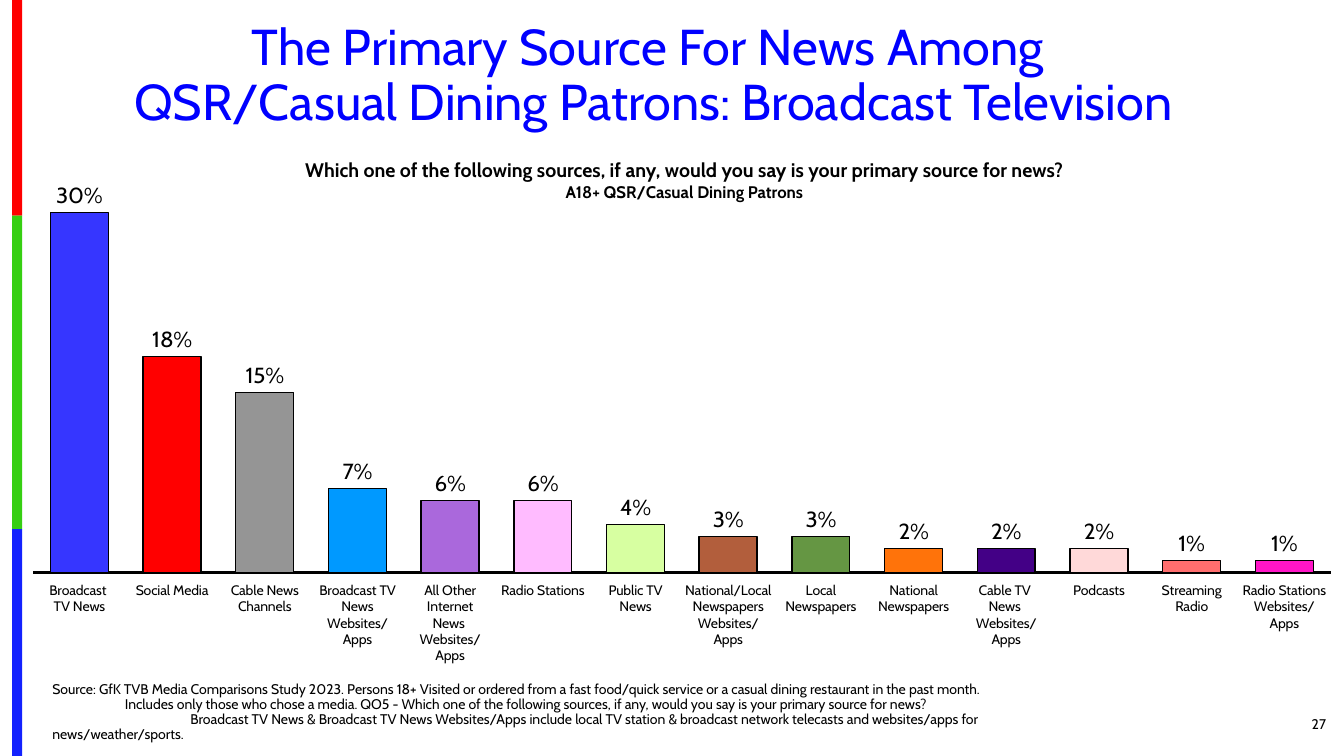
from pptx import Presentation
from pptx.chart.data import CategoryChartData
from pptx.dml.color import RGBColor
from pptx.enum.chart import XL_CHART_TYPE, XL_LABEL_POSITION, XL_TICK_LABEL_POSITION, XL_TICK_MARK
from pptx.enum.shapes import MSO_SHAPE
from pptx.enum.text import MSO_ANCHOR, PP_ALIGN
from pptx.oxml import parse_xml
from pptx.oxml.ns import nsdecls
from pptx.util import Inches, Pt

COLUMN = XL_CHART_TYPE.COLUMN_CLUSTERED
OUTSIDE = XL_LABEL_POSITION.OUTSIDE_END
LOW = XL_TICK_LABEL_POSITION.LOW
NO_TICK = XL_TICK_MARK.NONE
RECT = MSO_SHAPE.RECTANGLE
TOP, MIDDLE, BOTTOM = MSO_ANCHOR.TOP, MSO_ANCHOR.MIDDLE, MSO_ANCHOR.BOTTOM
LEFT, CENTER, RIGHT = PP_ALIGN.LEFT, PP_ALIGN.CENTER, PP_ALIGN.RIGHT

FONT = "Cabin"
COLORS = {"title": "0000FF", "text": "000000", "bar": "CCCCCC"}

# Colour and height of each stripe, from the top down
STRIPES = [("FE0000", 2.14), ("36CF12", 3.11), ("1322FE", 2.25)]

TITLE = "The Primary Source For News Among \vQSR/Casual Dining Patrons: Broadcast Television"
ASK = "Which one of the following sources, if any, would you say is your primary source for news?"
BASE = "A18+ QSR/Casual Dining Patrons"
# Each source line with its first-line indent
SOURCE = [
    ("Source: GfK TVB Media Comparisons Study 2023. Persons 18+ Visited or ordered from a fast "
     "food/quick service or a casual dining restaurant in the past month.", 0),
    ("Includes only those who chose a media. QO5 - Which one of the following sources, if any, "
     "would you say is your primary source for news?", 0.72),
    ("Broadcast TV News & Broadcast TV News Websites/Apps include local TV station & broadcast "
     "network telecasts and websites/apps for news/weather/sports.", 1.37),
]
PAGE = "27"

# Name, share and colour of each bar
BARS = [
    ("Broadcast \nTV News", 0.30, "3636FF"),
    ("Social Media", 0.18, "FF0000"),
    ("Cable News Channels", 0.15, "959595"),
    ("Broadcast TV News Websites/Apps", 0.07, "0099FF"),
    ("All Other Internet\nNews \nWebsites/Apps", 0.06, "AA68DC"),
    ("Radio Stations", 0.06, "FFBBFF"),
    ("Public TV News", 0.04, "D7FFA1"),
    ("National/Local Newspapers Websites/Apps", 0.03, "B25E3C"),
    ("Local Newspapers", 0.03, "659643"),
    ("National Newspapers", 0.02, "FF730A"),
    ("Cable TV \nNews \nWebsites/Apps", 0.02, "430086"),
    ("Podcasts", 0.02, "FFD9D9"),
    ("Streaming Radio", 0.01, "FF6E6E"),
    ("Radio Stations Websites/Apps", 0.01, "FF15C7"),
]
PLOT = {"x": 0.006, "y": 0.146, "w": 0.99, "h": 0.722}


def rgb(code):
    return RGBColor.from_string(code)


def style(font, size, color="text", bold=False):
    font.name, font.size, font.bold = FONT, Pt(size), bold
    font.color.rgb = rgb(COLORS[color])


def add_text(slide, box, lines, align=LEFT, anchor=TOP, space=1.0, color="text", bold=False):
    """Add a text box; each line is (text, size, first-line indent)."""
    frame = slide.shapes.add_textbox(*map(Inches, box)).text_frame
    frame.word_wrap = True
    frame.vertical_anchor = anchor
    for i, (text, size, indent) in enumerate(lines):
        para = frame.add_paragraph() if i else frame.paragraphs[0]
        para.text = text
        para.alignment, para.line_spacing = align, space
        if indent:
            para._p.get_or_add_pPr().set("indent", str(Inches(indent)))
        for run in para.runs:
            style(run.font, size, color, bold)


def add_stripes(slide):
    top = 0
    for color, height in STRIPES:
        bar = slide.shapes.add_shape(RECT, *map(Inches, (0.12, top, 0.1, height)))
        bar.shadow.inherit = False
        bar.fill.solid()
        bar.fill.fore_color.rgb = rgb(color)
        bar.line.fill.background()
        top += height


def place_plot(chart):
    """Fix the inner plot area as fractions of the chart."""
    modes = "".join(f'<c:{k}Mode val="edge"/>' for k in "xy")
    sizes = "".join(f'<c:{k} val="{v}"/>' for k, v in PLOT.items())
    area = chart._chartSpace.chart.plotArea
    for old in area.findall("{*}layout"):
        area.remove(old)
    area.insert(0, parse_xml(
        f'<c:layout {nsdecls("c")}><c:manualLayout><c:layoutTarget val="inner"/>'
        f'{modes}{sizes}</c:manualLayout></c:layout>'))


def add_bars(slide):
    names, shares, fills = zip(*BARS)
    data = CategoryChartData(number_format="0%")
    data.categories = names
    data.add_series("Series 1", shares)
    box = map(Inches, (0.25, 0.67, 13, 5.92))
    chart = slide.shapes.add_chart(COLUMN, *box, data).chart
    chart.has_legend = chart.has_title = False
    style(chart.font, 10)
    place_plot(chart)

    shares_axis = chart.value_axis
    shares_axis.visible = shares_axis.has_major_gridlines = False
    shares_axis.minimum_scale, shares_axis.maximum_scale = 0, 0.35
    names_axis = chart.category_axis
    names_axis.major_tick_mark = names_axis.minor_tick_mark = NO_TICK
    names_axis.tick_label_position = LOW
    names_axis.format.line.color.rgb = rgb(COLORS["text"])
    names_axis.format.line.width = Pt(1.5)
    style(names_axis.tick_labels.font, 10)

    plot = chart.plots[0]
    plot.gap_width, plot.vary_by_categories = 60, False
    series = plot.series[0]
    series.format.fill.solid()
    series.format.fill.fore_color.rgb = rgb(COLORS["bar"])
    for i, fill in enumerate(fills):
        look = series.points[i].format
        look.fill.solid()
        look.fill.fore_color.rgb = rgb(fill)
        look.line.color.rgb = rgb(COLORS["text"])
        look.line.width = Pt(1)
    labels = series.data_labels
    labels.show_value, labels.position = True, OUTSIDE
    labels.number_format, labels.number_format_is_linked = "0%", False
    style(labels.font, 16)


def main():
    deck = Presentation()
    deck.slide_width, deck.slide_height = Inches(13.33), Inches(7.5)
    slide = deck.slides.add_slide(deck.slide_layouts[6])
    add_stripes(slide)
    add_bars(slide)
    add_text(slide, (0.09, 0.17, 12.78, 1.19), [(TITLE, 36, 0)],
             align=CENTER, space=0.9, color="title")
    add_text(slide, (12.17, 6.98, 1.08, 0.4), [(PAGE, 10, 0)], align=RIGHT, anchor=MIDDLE)
    add_text(slide, (0.42, 6.72, 9.55, 0.7), [(text, 10, indent) for text, indent in SOURCE],
             anchor=BOTTOM, space=0.9)
    add_text(slide, (2.17, 1.52, 9.24, 0.54), [(ASK, 14, 0), (BASE, 12, 0)],
             align=CENTER, bold=True)
    deck.save("out.pptx")


if __name__ == "__main__":
    main()
